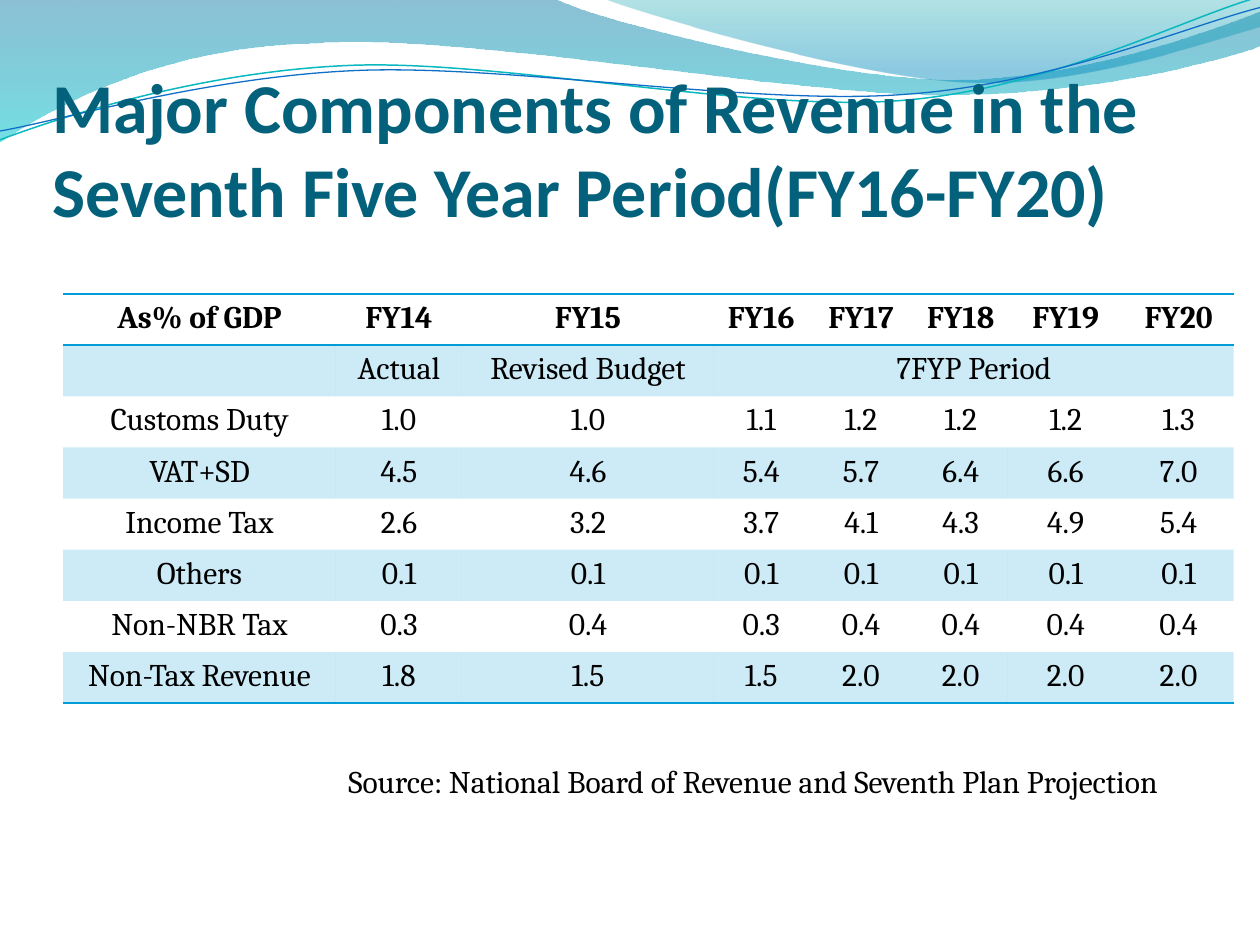
from dataclasses import dataclass

from lxml import etree
from pptx import Presentation
from pptx.dml.color import RGBColor
from pptx.enum.text import MSO_ANCHOR, PP_ALIGN
from pptx.oxml.ns import qn
from pptx.util import Inches, Pt

BOTTOM = MSO_ANCHOR.BOTTOM
LEFT, CENTER = PP_ALIGN.LEFT, PP_ALIGN.CENTER
UNIT = Inches(10) / 24  # the slide is a grid of 24 columns by 18 rows
PLAIN_TABLE = "{2D5ABB26-0587-4C30-8999-92F81FD0307C}"


@dataclass(frozen=True)
class Theme:
    title: str = "04617B"
    text: str = "000000"
    accent: str = "009DD9"
    heading_font: str = "Calibri"
    body_font: str = "Cambria"
    title_size: int = 40
    body_size: int = 18
    band_alpha: int = 20
    rule_width: float = 1


THEME = Theme()

# Wave outlines: a start point, then lines (one point) or Bézier curves (three),
# measured in tenths of the slide's width.
BACK_WAVE = [
    [(0, 0)], [(4.4, -0.01)],
    [(4.76, 0.17), (6.64, 0.63), (7.58, 0.63)],
    [(8.53, 0.63), (9.58, 0.26), (10, 0.09)], [(10.01, 0.36)],
    [(9.83, 0.44), (8.7, 0.76), (7.46, 0.75)],
    [(6.22, 0.75), (3.82, 0.28), (2.57, 0.34)],
    [(1.29, 0.36), (0.46, 0.83), (-0.01, 1.13)],
]
FRONT_WAVE = [
    [(4.79, -0.01)],
    [(5.09, 0.11), (6.82, 0.62), (7.69, 0.65)],
    [(8.56, 0.69), (9.61, 0.32), (10, 0.21)], [(10, 0)],
]
TEAL_CURVE = [
    [(0, 1.11)],
    [(0.48, 0.93), (1.58, 0.57), (2.77, 0.52)],
    [(3.95, 0.47), (5.93, 0.89), (7.13, 0.8)],
    [(8.33, 0.71), (9.38, 0.15), (9.98, -0.02)],
]
BLUE_CURVE = [
    [(0, 1.04)],
    [(0.47, 0.96), (1.64, 0.61), (2.83, 0.56)],
    [(4.03, 0.51), (5.97, 0.84), (7.17, 0.75)],
    [(8.36, 0.67), (9.41, 0.21), (10, 0.06)],
]
# Stops are (position, colour, opacity in percent).
FILLED_WAVES = [
    (BACK_WAVE, [(0, "0074A1", 45), (1, "00C6CF", 55)]),
    (FRONT_WAVE, [(0, "00A1A9", 30), (0.8, "008BBF", 45)]),
]
WAVE_LINES = [(TEAL_CURVE, "0AB8BF", 0.85), (BLUE_CURVE, "0F6FC6", 0.75)]

COLUMNS = [5.2, 2.4, 4.8, 1.8, 2, 1.8, 2.2, 2.1]
ROWS = [
    ["As% of GDP", "FY14", "FY15", "FY16", "FY17", "FY18", "FY19", "FY20"],
    ["", "Actual", "Revised Budget", "7FYP Period"],
    ["Customs Duty", "1.0", "1.0", "1.1", "1.2", "1.2", "1.2", "1.3"],
    ["VAT+SD", "4.5", "4.6", "5.4", "5.7", "6.4", "6.6", "7.0"],
    ["Income Tax", "2.6", "3.2", "3.7", "4.1", "4.3", "4.9", "5.4"],
    ["Others", "0.1", "0.1", "0.1", "0.1", "0.1", "0.1", "0.1"],
    ["Non-NBR Tax", "0.3", "0.4", "0.3", "0.4", "0.4", "0.4", "0.4"],
    ["Non-Tax Revenue", "1.8", "1.5", "1.5", "2.0", "2.0", "2.0", "2.0"],
]


def grid(*cells):
    return [round(c * UNIT) for c in cells]


def rgb(color):
    return RGBColor.from_string(color)


def set_alpha(color_element, percent):
    etree.SubElement(color_element, qn("a:alpha")).set("val", str(percent * 1000))


def write(tf, text, font, size, color, bold=False, align=LEFT):
    tf.text = text
    p = tf.paragraphs[0]
    p.alignment = align
    p.font.size = Pt(size)
    for r in p.runs:
        r.font.name, r.font.size, r.font.bold = font, Pt(size), bold
        r.font.color.rgb = rgb(color)


def bend(sp, outline):
    """Join the straight pieces of each three-point segment into one Bézier curve."""
    pieces = iter(list(sp.element.spPr.iter(qn("a:lnTo"))))
    for segment in outline[1:]:
        first, *others = [next(pieces) for _ in segment]
        if others:
            first.tag = qn("a:cubicBezTo")
        for piece in others:
            first.append(piece[0])
            piece.getparent().remove(piece)


def add_wave(s, box, outline, close):
    left, top, width, _ = box
    points = [(round(left + x * width / 10), round(top + y * width / 10))
              for segment in outline for x, y in segment]
    builder = s.shapes.build_freeform(*points[0])
    builder.add_line_segments(points[1:], close=close)
    sp = builder.convert_to_shape()
    bend(sp, outline)
    sp.shadow.inherit = False
    return sp


def add_wave_band(s, box):
    for outline, stops in FILLED_WAVES:
        sp = add_wave(s, box, outline, True)
        sp.fill.gradient()
        sp.fill.gradient_angle = 270
        for stop, (position, color, _) in zip(sp.fill.gradient_stops, stops):
            stop.position, stop.color.rgb = position, rgb(color)
        colors = list(sp.element.spPr.iter(qn("a:srgbClr")))
        for element, (_, _, opacity) in zip(colors, stops):
            set_alpha(element, opacity)
        sp.line.fill.background()
    for outline, color, width in WAVE_LINES:
        sp = add_wave(s, box, outline, False)
        sp.fill.background()
        sp.line.color.rgb = rgb(color)
        sp.line.width = Pt(width)


def add_title(s, box):
    tf = s.shapes.add_textbox(*box).text_frame
    tf.word_wrap = True
    tf.vertical_anchor = BOTTOM
    tf.margin_left = tf.margin_right = tf.margin_bottom = 0
    write(tf, "Major Components of Revenue in the Seventh Five Year Period(FY16-FY20)",
          THEME.heading_font, THEME.title_size, THEME.title, bold=True)


def add_rule(cell, side):
    """Draw a cell border: side is lnT or lnB. Call before the cell is filled."""
    ln = etree.SubElement(cell._tc.get_or_add_tcPr(), qn(f"a:{side}"))
    ln.set("w", str(Pt(THEME.rule_width)))
    fill = etree.SubElement(ln, qn("a:solidFill"))
    etree.SubElement(fill, qn("a:srgbClr")).set("val", THEME.accent)


def fill_cell(cell, banded):
    if not banded:
        cell.fill.background()
        return
    cell.fill.solid()
    cell.fill.fore_color.rgb = rgb(THEME.accent)
    set_alpha(cell._tc.tcPr.find(qn("a:solidFill"))[0], THEME.band_alpha)


def add_revenue_table(s, box):
    table = s.shapes.add_table(len(ROWS), len(COLUMNS), *box).table
    table._tbl.tblPr.find(qn("a:tableStyleId")).text = PLAIN_TABLE
    for column, width in zip(table.columns, COLUMNS):
        column.width = round(box[2] * width / sum(COLUMNS))
    table.cell(1, 3).merge(table.cell(1, len(COLUMNS) - 1))
    for i, row in enumerate(ROWS):
        for j in range(len(COLUMNS)):
            cell = table.cell(i, j)
            if i == 0:
                add_rule(cell, "lnT")
            if i in (0, len(ROWS) - 1):
                add_rule(cell, "lnB")
            fill_cell(cell, banded=i % 2 == 1)
            if j < len(row):
                write(cell.text_frame, row[j], THEME.body_font, THEME.body_size,
                      THEME.text, bold=i == 0, align=CENTER)


def add_source_note(s, box):
    tf = s.shapes.add_textbox(*box).text_frame
    tf.word_wrap = True
    write(tf, "Source: National Board of Revenue and Seventh Plan Projection",
          THEME.body_font, THEME.body_size, THEME.text)


def main():
    prs = Presentation()
    prs.slide_width, prs.slide_height = grid(24, 18)
    s = prs.slides.add_slide(prs.slide_layouts[6])
    add_wave_band(s, grid(0, 0, 24, 2.7))
    add_title(s, grid(1, 1.4, 21.6, 3))
    add_revenue_table(s, grid(1.2, 5.6, sum(COLUMNS), 7.8))
    add_source_note(s, grid(6.4, 14.4, 17, 0.96))
    prs.save("out.pptx")


if __name__ == "__main__":
    main()
